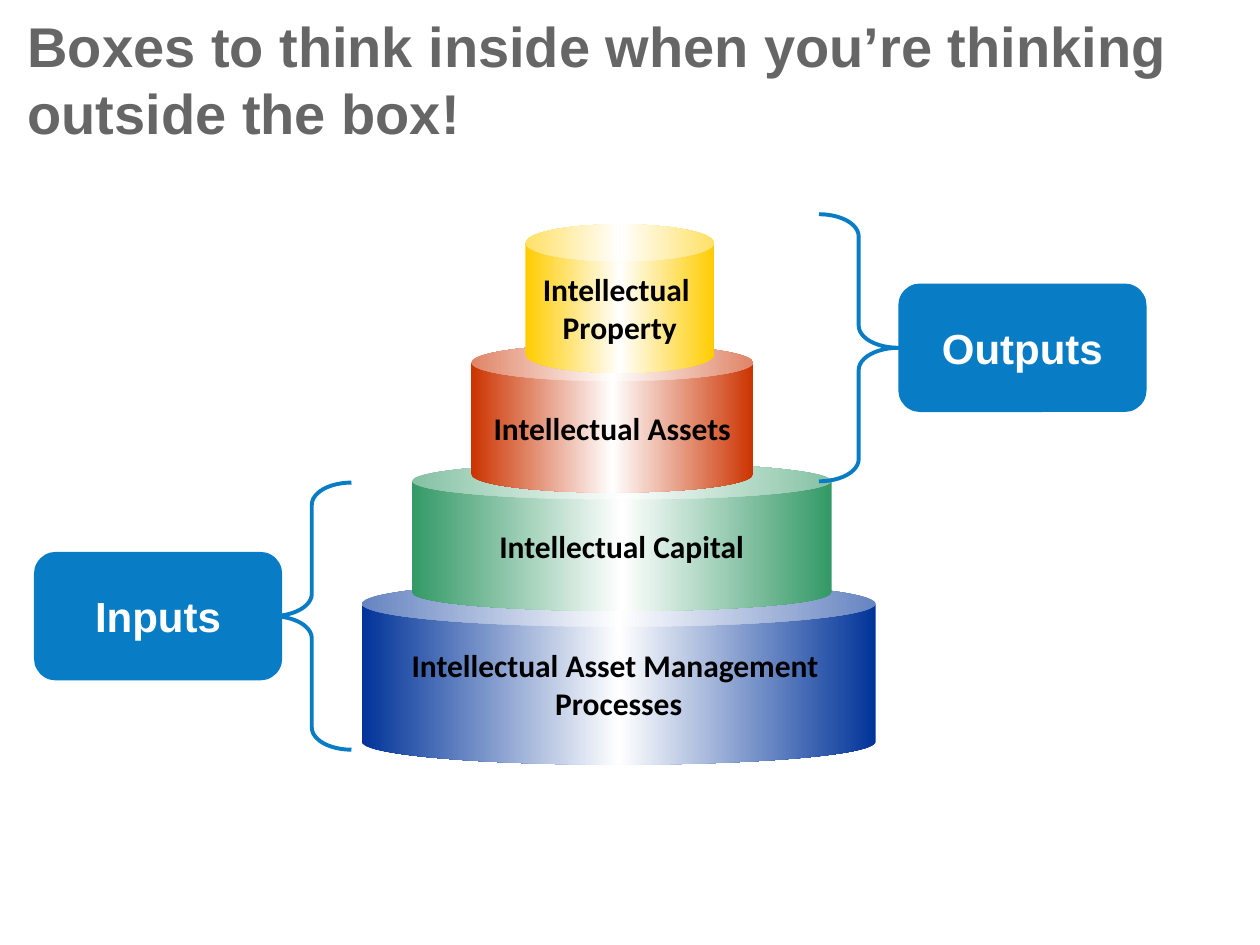
from copy import deepcopy
from dataclasses import dataclass

from pptx import Presentation
from pptx import util as u
from pptx.dml.color import RGBColor
from pptx.enum import shapes, text

PX = 9144
BLUE = "087CC4"
BRACE_W, BRACE_H = 63, 212
LABEL_W, LABEL_H = 197, 102


@dataclass
class Tier:
    x: int
    y: int
    w: int
    h: int
    color: str
    lines: list[str]


@dataclass
class Group:
    label: str
    label_x: int
    label_y: int
    brace_x: int
    brace_y: int
    rotation: int


TIERS = [
    Tier(287, 461, 408, 146, "003399", ["Intellectual Asset Management ", "Processes"]),
    Tier(327, 367, 333, 118, "339966", ["Intellectual Capital"]),
    Tier(374, 273, 224, 118, "CC3300", ["Intellectual Assets"]),
    Tier(417, 178, 150, 118, "FFCC00", ["Intellectual ", "Property"]),
]
GROUPS = [
    Group("Inputs", 27, 438, 216, 383, 0),
    Group("Outputs", 713, 225, 650, 170, 180),
]


def rgb(color: str) -> RGBColor:
    return RGBColor.from_string(color)


def px(*lengths: int) -> list[int]:
    return [u.Emu(n * PX) for n in lengths]


def add_shape(s, kind, x: int, y: int, w: int, h: int, adj: float):
    sp = s.shapes.add_shape(kind, *px(x, y, w, h))
    sp.shadow.inherit = False
    sp.adjustments[0] = adj
    return sp


def write(sp, lines: list[str], font: str, size: int, color: str,
          align=text.PP_ALIGN.CENTER, wrap: bool = True) -> None:
    tf = sp.text_frame
    tf.word_wrap = wrap
    tf.vertical_anchor = text.MSO_ANCHOR.MIDDLE
    for i, line in enumerate(lines):
        p = tf.add_paragraph() if i else tf.paragraphs[0]
        p.alignment = align
        r = p.add_run()
        r.text = line
        r.font.name = font
        r.font.size = u.Pt(size)
        r.font.bold = True
        r.font.color.rgb = rgb(color)


def fill_shine(sp, color: str) -> None:
    sp.fill.gradient()
    sp.fill.gradient_angle = 0
    last = sp._element.spPr.xpath("./a:gradFill/a:gsLst/a:gs")[-1]
    last.addnext(deepcopy(last))
    stops = zip(sp.fill.gradient_stops, (0, 0.5, 1), (color, "FFFFFF", color))
    for stop, position, stop_color in stops:
        stop.position = position
        stop.color.rgb = rgb(stop_color)


def draw_tier(s, tier: Tier) -> None:
    sp = add_shape(s, shapes.MSO_SHAPE.CAN, tier.x, tier.y, tier.w, tier.h, 0.25)
    fill_shine(sp, tier.color)
    sp.line.fill.background()
    write(sp, tier.lines, "Calibri", 18, "000000", wrap=False)


def draw_brace(s, group: Group) -> None:
    sp = add_shape(s, shapes.MSO_SHAPE.LEFT_BRACE, group.brace_x, group.brace_y,
                   BRACE_W, BRACE_H, 0.28)
    sp.rotation = group.rotation
    sp.fill.background()
    sp.line.color.rgb = rgb(BLUE)
    sp.line.width = u.Pt(2.25)


def draw_label(s, group: Group) -> None:
    sp = add_shape(s, shapes.MSO_SHAPE.ROUNDED_RECTANGLE, group.label_x, group.label_y,
                   LABEL_W, LABEL_H, 0.17)
    sp.fill.solid()
    sp.fill.fore_color.rgb = rgb(BLUE)
    sp.line.fill.background()
    write(sp, [group.label], "Arial", 24, "FFFFFF")


def main() -> None:
    prs = Presentation()
    prs.slide_width, prs.slide_height = px(1000, 750)
    s = prs.slides.add_slide(prs.slide_layouts[6])
    for tier in TIERS:
        draw_tier(s, tier)
    title = s.shapes.add_textbox(*px(12, 0, 988, 125))
    write(title, ["Boxes to think inside when you’re thinking outside the box!"],
          "Arial", 32, "666666", text.PP_ALIGN.LEFT)
    for group in GROUPS:
        draw_brace(s, group)
    for group in GROUPS:
        draw_label(s, group)
    prs.save("out.pptx")


if __name__ == "__main__":
    main()
